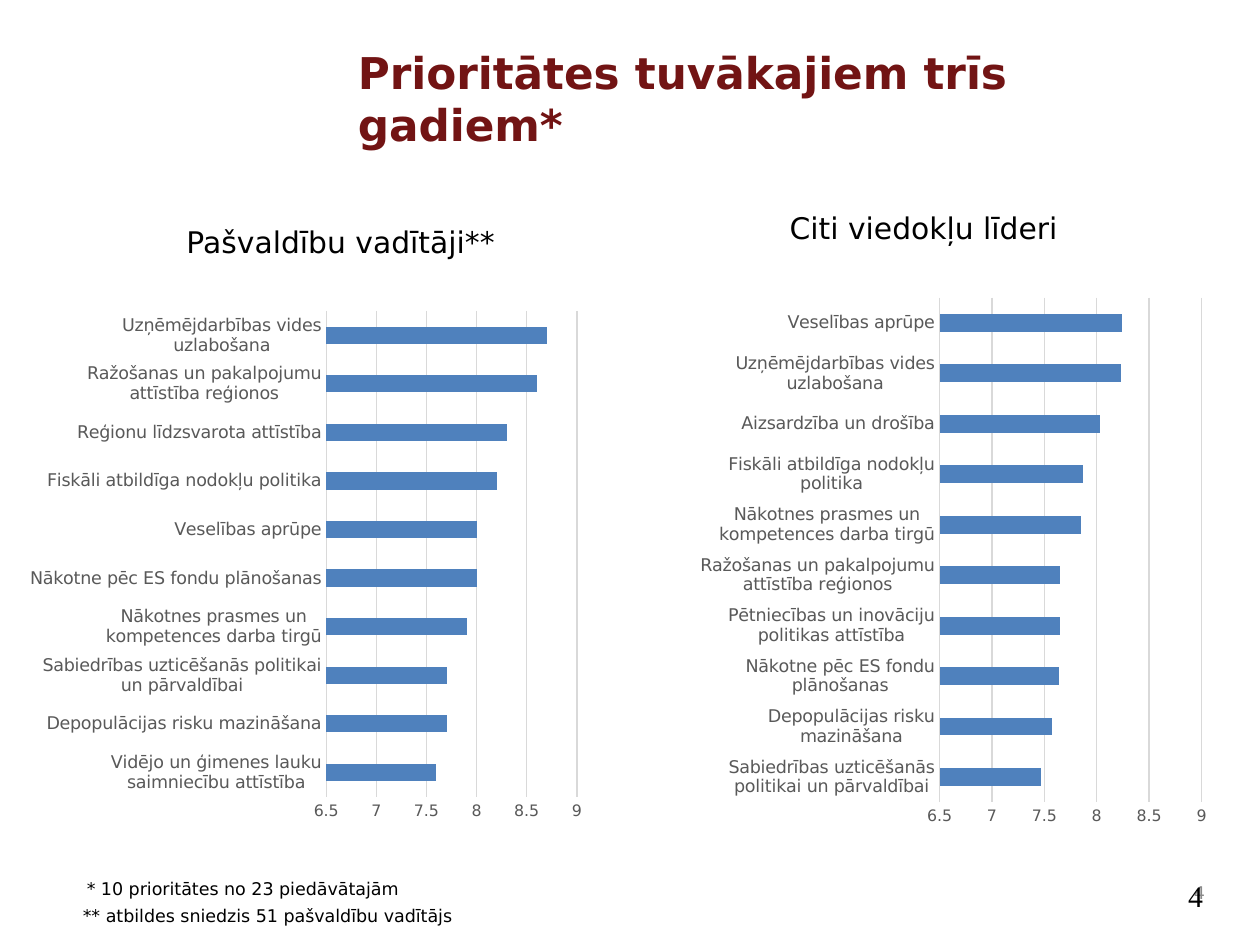
from dataclasses import dataclass

from lxml.etree import SubElement
from pptx import Presentation
from pptx.chart.data import CategoryChartData
from pptx.dml.color import RGBColor as RGB
from pptx.enum.chart import XL_CHART_TYPE as ChartType, XL_TICK_MARK as Tick
from pptx.enum.text import MSO_ANCHOR as Anchor, PP_ALIGN as Align
from pptx.oxml.ns import qn
from pptx.util import Cm, Pt


@dataclass(frozen=True)
class Theme:
    """Colours, fonts and type sizes of the slide."""
    sans: str = "DejaVu Sans"
    serif: str = "Times New Roman"
    title: RGB = RGB(0x72, 0x14, 0x14)
    text: RGB = RGB(0, 0, 0)
    label: RGB = RGB(0x59, 0x59, 0x59)
    muted: RGB = RGB(0x89, 0x89, 0x89)
    grid: RGB = RGB(0xD9, 0xD9, 0xD9)
    bar: RGB = RGB(0x4F, 0x81, 0xBD)
    title_size: int = 25
    heading_size: int = 17
    small_size: int = 10
    axis_size: int = 9


T = Theme()

BUSINESS = "Uzņēmējdarbības vides uzlabošana"
PRODUCTION = "Ražošanas un pakalpojumu attīstība reģionos"
FISCAL = "Fiskāli atbildīga nodokļu politika"
HEALTH = "Veselības aprūpe"
EU_FUNDS = "Nākotne pēc ES fondu plānošanas"
SKILLS = "Nākotnes prasmes un kompetences darba tirgū"
TRUST = "Sabiedrības uzticēšanās politikai un pārvaldībai"
DEPOPULATION = "Depopulācijas risku mazināšana"

MAYORS = {
    "Vidējo un ģimenes lauku saimniecību attīstība": 7.6,
    DEPOPULATION: 7.7, TRUST: 7.7, SKILLS: 7.9, EU_FUNDS: 8, HEALTH: 8,
    FISCAL: 8.2, "Reģionu līdzsvarota attīstība": 8.3,
    PRODUCTION: 8.6, BUSINESS: 8.7,
}
LEADERS = {
    TRUST: 7.47, DEPOPULATION: 7.57, EU_FUNDS: 7.64,
    "Pētniecības un inovāciju politikas attīstība": 7.65,
    PRODUCTION: 7.65, SKILLS: 7.85, FISCAL: 7.87,
    "Aizsardzība un drošība": 8.03, BUSINESS: 8.23, HEALTH: 8.24,
}


def style_font(font, size, color, name=T.sans, bold=False):
    """Set the face, size, colour and weight of a font."""
    font.name, font.size, font.bold = name, Pt(size), bold
    font.color.rgb = color


def add_text(s, box, text, size, color=T.text, name=T.sans,
             align=Align.LEFT, anchor=Anchor.TOP):
    """Add a one-run text box."""
    tf = s.shapes.add_textbox(*map(Cm, box)).text_frame
    tf.word_wrap, tf.vertical_anchor = True, anchor
    p = tf.paragraphs[0]
    p.alignment = align
    r = p.add_run()
    r.text = text
    style_font(r.font, size, color, name)


def add_title(s, box, text):
    """Place and format the title placeholder."""
    sp = s.shapes.title
    sp.left, sp.top, sp.width, sp.height = map(Cm, box)
    tf = sp.text_frame
    tf.word_wrap, tf.vertical_anchor = True, Anchor.TOP
    p = tf.paragraphs[0]
    p.alignment = Align.LEFT
    r = p.add_run()
    r.text = text
    style_font(r.font, T.title_size, T.title, bold=True)


def set_plot_box(chart, box):
    """Fix the inner plot area as fractions of the chart."""
    area = chart._chartSpace.chart.plotArea
    for old in area.findall(qn("c:layout")):
        area.remove(old)
    layout = SubElement(area, qn("c:layout"))
    area.insert(0, layout)
    manual = SubElement(layout, qn("c:manualLayout"))
    values = {"layoutTarget": "inner", "xMode": "edge", "yMode": "edge",
              **dict(zip("xywh", box))}
    for tag, value in values.items():
        SubElement(manual, qn(f"c:{tag}")).set("val", str(value))


def add_bars(s, box, scores, plot_box):
    """Add a horizontal bar chart of priority scores."""
    data = CategoryChartData()
    data.categories = list(scores)
    data.add_series("Series 1", list(scores.values()))
    chart = s.shapes.add_chart(
        ChartType.BAR_CLUSTERED, *map(Cm, box), data).chart
    chart.has_title = chart.has_legend = False
    style_font(chart.font, T.small_size, T.text)

    plot = chart.plots[0]
    plot.gap_width, plot.vary_by_categories = 182, False
    fill = plot.series[0].format.fill
    fill.solid()
    fill.fore_color.rgb = T.bar

    cat, val = chart.category_axis, chart.value_axis
    for axis, size in ((cat, T.small_size), (val, T.axis_size)):
        axis.major_tick_mark = axis.minor_tick_mark = Tick.NONE
        style_font(axis.tick_labels.font, size, T.label)
    val.minimum_scale, val.maximum_scale, val.major_unit = 6.5, 9, 0.5
    val.tick_labels.number_format = "General"
    val.tick_labels.number_format_is_linked = False
    val.has_major_gridlines = True
    val.format.line.fill.background()
    for line in (cat.format.line, val.major_gridlines.format.line):
        line.color.rgb, line.width = T.grid, Pt(0.75)
    set_plot_box(chart, plot_box)


def add_panel(s, box, heading, indent, scores, plot_box):
    """Add a heading with its bar chart below."""
    left, top, width, height = box
    head = 1.5
    add_text(s, (left + indent, top, 8.15, head), heading, T.heading_size)
    add_bars(s, (left, top + head, width, height - head), scores, plot_box)


def add_footnotes(s, box):
    """Add the two footnotes, the second slightly outdented."""
    left, top, width, height = box
    row = height / 2
    add_text(s, (left + 0.08, top, width, row),
             "* 10 prioritātes no 23 piedāvātajām", T.small_size)
    add_text(s, (left, top + row, width, row),
             "** atbildes sniedzis 51 pašvaldību vadītājs", T.small_size)


def add_page_number(s, box, number):
    """Add the muted page number and the large one over it."""
    add_text(s, box, number, T.small_size, T.muted,
             align=Align.RIGHT, anchor=Anchor.MIDDLE)
    add_text(s, box, number, T.heading_size, name=T.serif)


def main():
    """Build and save the slide."""
    prs = Presentation()
    prs.slide_width, prs.slide_height = Cm(25.4), Cm(19.05)
    s = prs.slides.add_slide(prs.slide_layouts[5])
    add_title(s, (6.96, 0.79, 16.94, 2.97),
              "Prioritātes tuvākajiem trīs gadiem*")
    add_panel(s, (0.53, 4.38, 11.86, 12.64), "Pašvaldību vadītāji**", 2.98,
              MAYORS, (0.51, 0.035, 0.426, 0.879))
    add_panel(s, (13.54, 4.1, 11, 12.92), "Citi viedokļu līderi", 2.13,
              LEADERS, (0.491, 0.035, 0.48, 0.891))
    add_footnotes(s, (1.42, 17.58, 8.3, 1.08))
    add_page_number(s, (23.7, 17.58, 0.84, 0.84), "4")
    prs.save("out.pptx")


if __name__ == "__main__":
    main()
